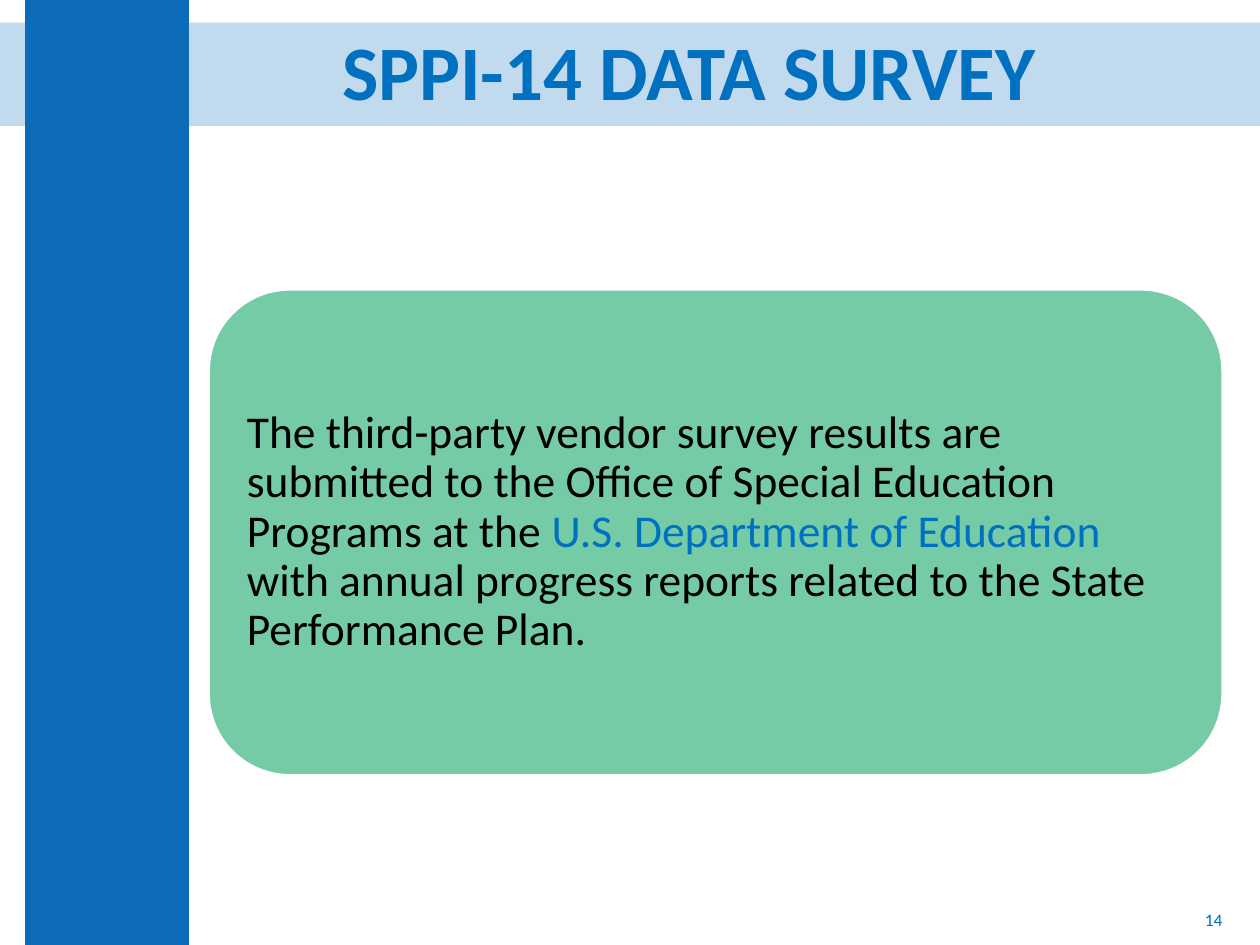
from lxml.etree import SubElement
from pptx import Presentation
from pptx.dml.color import RGBColor
from pptx.enum.shapes import MSO_SHAPE as Shape
from pptx.enum.text import MSO_ANCHOR as Anchor, PP_ALIGN as Align
from pptx.oxml.ns import qn
from pptx.util import Pt

PX = 9144  # EMU per px, 100 px to the inch
BLUE = RGBColor(0x0D, 0x6C, 0xB9)
TEXT_BLUE = RGBColor(0x00, 0x70, 0xC0)
GREEN = RGBColor(0x76, 0xCB, 0xA7)
BLACK = RGBColor(0, 0, 0)
WHITE = RGBColor(255, 255, 255)


def emu(*lengths):
    return [length * PX for length in lengths]


def add_block(slide, kind, box, fill, line=None, opacity=None):
    shape = slide.shapes.add_shape(kind, *emu(*box))
    shape.shadow.inherit = False
    shape.fill.solid()
    shape.fill.fore_color.rgb = fill
    if opacity is not None:
        color = shape.fill._xPr.find(qn("a:solidFill"))[0]
        SubElement(color, qn("a:alpha"), val=str(opacity * 1000))
    if line is None:
        shape.line.fill.background()
    else:
        shape.line.color.rgb = line
        shape.line.width = Pt(1)
    return shape


def add_text(slide, box, runs, size, align=Align.LEFT, spacing=None,
             bold=False, margin=None):
    frame = slide.shapes.add_textbox(*emu(*box)).text_frame
    frame.word_wrap = True
    frame.vertical_anchor = Anchor.MIDDLE
    if margin is not None:
        for side in ("left", "top", "right", "bottom"):
            setattr(frame, f"margin_{side}", margin * PX)
    paragraph = frame.paragraphs[0]
    paragraph.alignment = align
    paragraph.line_spacing = spacing
    font_format = {"name": "Calibri", "size": Pt(size), "bold": bold}
    for text, color in runs:
        run = paragraph.add_run()
        run.text = text
        for name, value in font_format.items():
            setattr(run.font, name, value)
        run.font.color.rgb = color


def add_background(slide, left, top, width, height):
    # Pale title band crossed by the solid side bar
    add_block(slide, Shape.RECTANGLE, (left, top + 18, width, 82), BLUE, opacity=25)
    add_block(slide, Shape.RECTANGLE, (left + 20, top, 130, height), BLUE)


def add_message(slide, left, top, width, height):
    # Rounded panel with its text inset
    inset = 19
    add_block(slide, Shape.ROUNDED_RECTANGLE, (left, top, width, height), GREEN, WHITE)
    runs = [
        ("The third-party vendor survey results are submitted to the Office of "
         "Special Education Programs at the ", BLACK),
        ("U.S. Department of Education ", TEXT_BLUE),
        ("with annual progress reports related to the State Performance Plan.", BLACK),
    ]
    text_box = (left + inset, top + inset, width - 2 * inset, height - 2 * inset)
    add_text(slide, text_box, runs, 26, spacing=0.9, margin=11)


def main():
    presentation = Presentation()
    presentation.slide_width, presentation.slide_height = emu(1000, 750)
    slide = presentation.slides.add_slide(presentation.slide_layouts[6])

    add_background(slide, 0, 0, 1000, 750)
    # Slide number and title
    add_text(slide, (755, 710, 225, 40), [("14", TEXT_BLUE)], 10, Align.RIGHT)
    add_text(slide, (152, 19, 790, 82), [("SPPI-14 DATA SURVEY", TEXT_BLUE)], 44,
             Align.CENTER, spacing=0.9, bold=True)
    add_message(slide, 166, 230, 804, 385)

    presentation.save("out.pptx")


if __name__ == "__main__":
    main()
